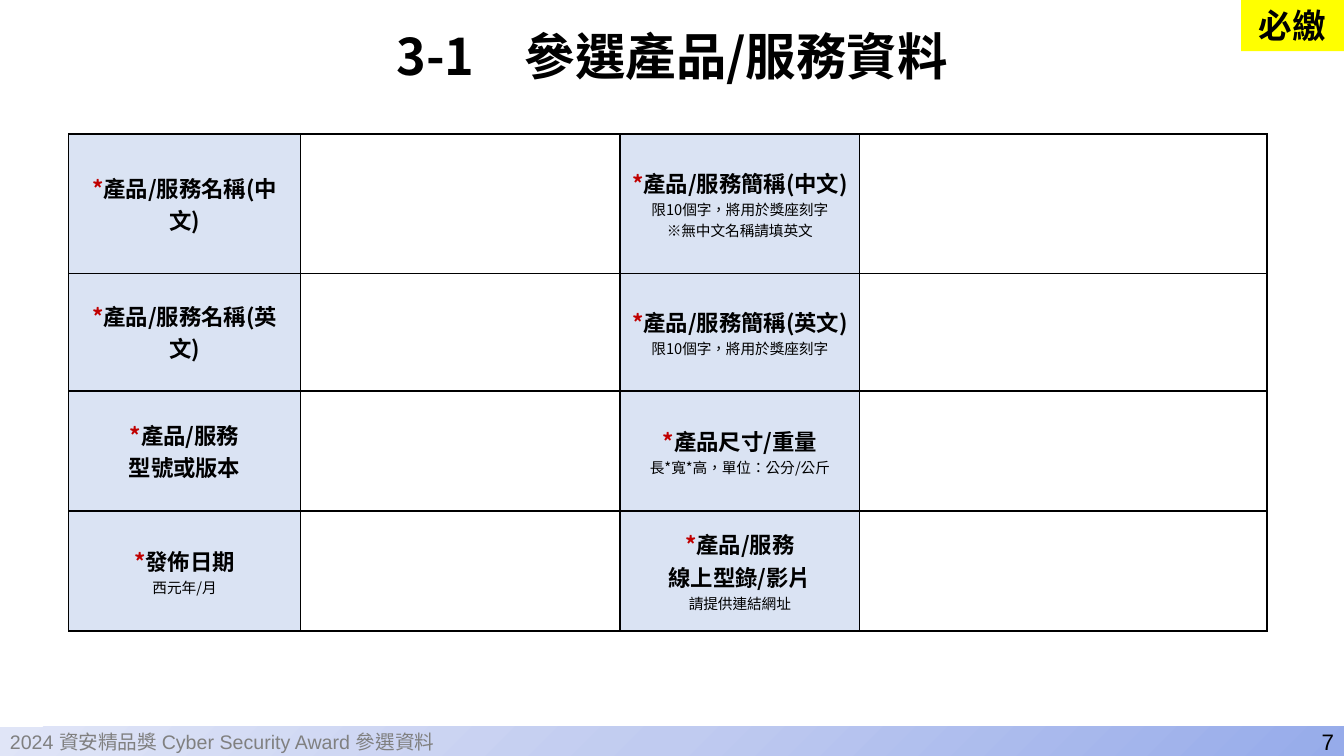
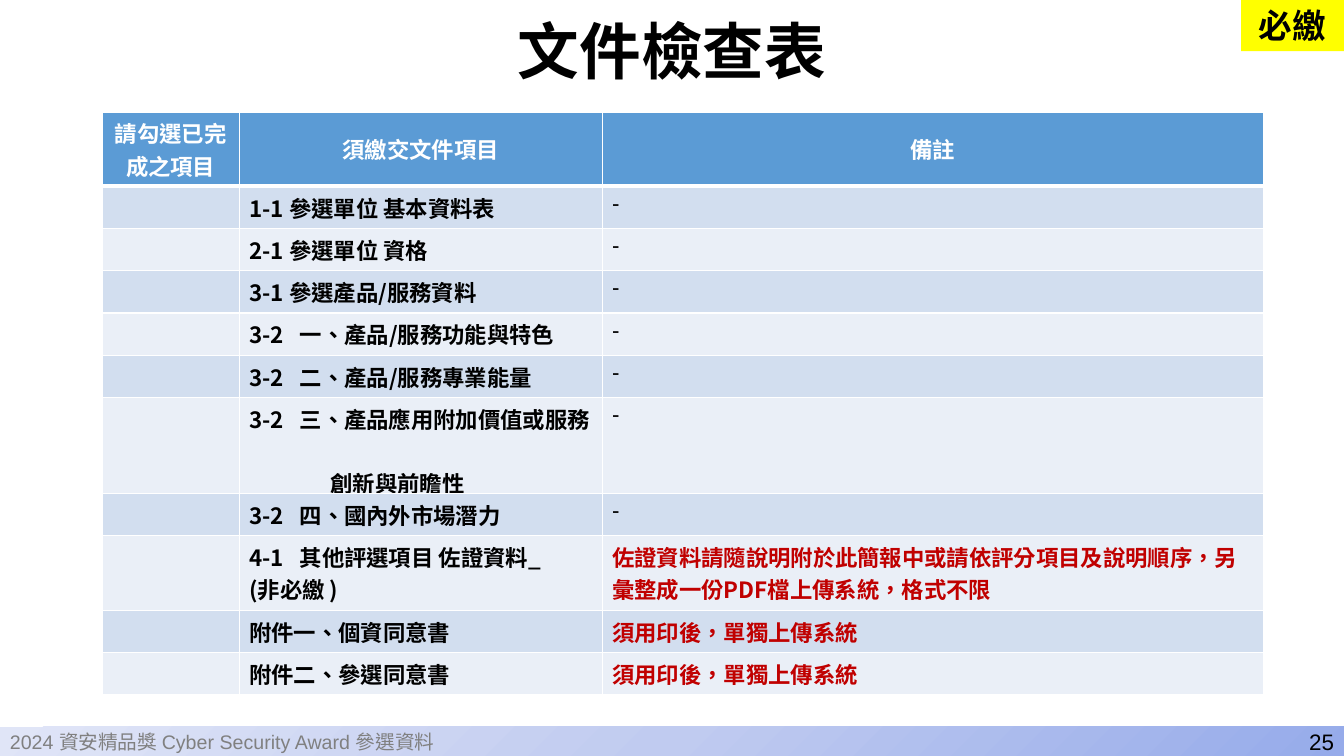
from dataclasses import dataclass

from lxml import etree
from pptx import Presentation
from pptx.dml.color import RGBColor
from pptx.enum.lang import MSO_LANGUAGE_ID
from pptx.enum.shapes import MSO_SHAPE
from pptx.enum.text import MSO_ANCHOR, PP_ALIGN
from pptx.oxml import parse_xml
from pptx.oxml.ns import nsdecls, qn
from pptx.util import Pt

LEFT, CENTER, RIGHT = PP_ALIGN.LEFT, PP_ALIGN.CENTER, PP_ALIGN.RIGHT
TOP, MIDDLE = MSO_ANCHOR.TOP, MSO_ANCHOR.MIDDLE
RECTANGLE = MSO_SHAPE.RECTANGLE
CHINESE = MSO_LANGUAGE_ID.TRADITIONAL_CHINESE


@dataclass(frozen=True)
class Theme:
    """Colours, fonts and type sizes of the deck."""

    black: str = "000000"
    white: str = "FFFFFF"
    red: str = "C00000"
    grey: str = "808080"
    yellow: str = "FFFF00"
    label: str = "DAE3F3"
    header: str = "5B9BD5"
    bands: tuple = ("D2DEEF", "EAEFF7")
    gradient: tuple = ((0, "96ABEA"), (50, "C0CBF0"), (100, "E0E5F7"))
    plain_font: str = "Arial"
    chinese_font: str = "Noto Sans CJK SC"
    long_title: float = 36
    short_title: float = 44
    badge: float = 24
    text: float = 16
    footer: float = 14
    hint: float = 10.5


THEME = Theme()
WIDTH, HEIGHT = 960, 540
TITLE_BOX = (0, 0, WIDTH, 78.5)
BADGE_BOX = (886.5, 0, 73.5, 36.5)
BAND_BOX = (0, 519, WIDTH, 21)
NUMBER_BOX = (905, 515, 55, 29)
CODE_TAB = 36

FORM_BOX = (49, 95.76, 856.08, 354.96)
FORM_COLUMNS = (165.6, 228.24, 171.36, 290.88)
FORM_ROWS = (99.36, 84.24, 85.68, 85.68)
FORM_LABELS = (
    ((["產品/服務名稱(中文)"], []),
     (["產品/服務簡稱(中文)"], ["限10個字，將用於獎座刻字", "※無中文名稱請填英文"])),
    ((["產品/服務名稱(英文)"], []),
     (["產品/服務簡稱(英文)"], ["限10個字，將用於獎座刻字"])),
    ((["產品/服務", "型號或版本"], []),
     (["產品尺寸/重量"], ["長*寬*高，單位：公分/公斤"])),
    ((["發佈日期"], ["西元年/月"]),
     (["產品/服務", "線上型錄/影片"], ["請提供連結網址"])),
)

CHECK_BOX = (73, 80, 829.44, 425)
CHECK_COLUMNS = (97.92, 259.2, 472.32)
CHECK_HEADERS = ("請勾選已完成之項目", "須繳交文件項目", "備註")
HEADER_HEIGHT, ROW_HEIGHT = 53, 30.2
SEAL_NOTE = "須用印後，單獨上傳系統"
CHECK_ITEMS = (
    (["1-1 參選單位 基本資料表"], "-"),
    (["2-1 參選單位 資格"], "-"),
    (["3-1 參選產品/服務資料"], "-"),
    (["3-2\t一、產品/服務功能與特色"], "-"),
    (["3-2\t二、產品/服務專業能量"], "-"),
    (["3-2\t三、產品應用附加價值或服務", "創新與前瞻性"], "-"),
    (["3-2\t四、國內外市場潛力"], "-"),
    (["4-1\t其他評選項目 佐證資料_", "(非必繳 )"],
     "佐證資料請隨說明附於此簡報中或請依評分項目及說明順序，另彙整成一份PDF檔上傳系統，格式不限"),
    (["附件一、個資同意書"], SEAL_NOTE),
    (["附件二、參選同意書"], SEAL_NOTE),
)


def points(box):
    """Turn a box of numbers into lengths."""
    return [Pt(value) for value in box]


def color(value):
    """Turn a hex string into a colour."""
    return RGBColor.from_string(value)


def style(para, size, ink=THEME.black, bold=True, align=CENTER, face=THEME.chinese_font):
    """Set alignment and font of one paragraph."""
    para.alignment = align
    font = para.font
    font.size, font.bold, font.name = Pt(size), bold, face
    font.color.rgb = color(ink)
    font.language_id = CHINESE
    east = etree.SubElement(para._p.pPr.find(qn("a:defRPr")), qn("a:ea"))
    east.set("typeface", THEME.chinese_font)


def write(frame, lines):
    """Fill a text frame with one paragraph per line and return them."""
    frame.word_wrap = True
    paras = [frame.paragraphs[0]] + [frame.add_paragraph() for _ in lines[1:]]
    for para, line in zip(paras, lines):
        if line:
            para.add_run().text = line
    return paras


def add_block(page, box, text, fill=None):
    """Add a flat rectangle with one line of text."""
    block = page.shapes.add_shape(RECTANGLE, *points(box))
    block.shadow.inherit = False
    block.line.fill.background()
    block.fill.background()
    if fill:
        block.fill.solid()
        block.fill.fore_color.rgb = color(fill)
    block.text_frame.vertical_anchor = MIDDLE
    return block, write(block.text_frame, [text])[0]


def add_band(page, box):
    """Draw the footer band and hand it to the layout of the page."""
    band, para = add_block(page, box, "2024 資安精品獎 Cyber Security Award 參選資料")
    style(para, THEME.footer, THEME.grey, False, LEFT, THEME.plain_font)
    stops = "".join(
        f'<a:gs pos="{place * 1000}"><a:srgbClr val="{tint}"/></a:gs>'
        for place, tint in THEME.gradient
    )
    gradient = parse_xml(
        f'<a:gradFill {nsdecls("a")} rotWithShape="1"><a:gsLst>{stops}</a:gsLst>'
        '<a:path path="circle"><a:fillToRect l="100000" t="100000"/></a:path></a:gradFill>'
    )
    properties = band.element.spPr
    properties.replace(properties.find(qn("a:noFill")), gradient)
    page.slide_layout.element.cSld.spTree.append(band.element)


def add_page(deck, layout, title, size, number, spacing=1.0):
    """Add a slide with title, badge and page number."""
    page = deck.slides.add_slide(layout)
    heading = page.shapes.title
    heading.left, heading.top, heading.width, heading.height = points(TITLE_BOX)
    heading.text_frame.vertical_anchor = MIDDLE
    para = write(heading.text_frame, [title])[0]
    para.line_spacing = spacing
    style(para, size)
    style(add_block(page, BADGE_BOX, "必繳", THEME.yellow)[1], THEME.badge)
    number_box = page.shapes.add_textbox(*points(NUMBER_BOX))
    number_box.text_frame.vertical_anchor = MIDDLE
    para = write(number_box.text_frame, [number])[0]
    style(para, THEME.text, bold=False, align=RIGHT, face=THEME.plain_font)
    return page


def add_grid(page, box, columns, rows, header):
    """Add a table with given column widths and row heights."""
    grid = page.shapes.add_table(len(rows), len(columns), *points(box)).table
    grid.first_row, grid.horz_banding = header, False
    for column, width in zip(grid.columns, columns):
        column.width = Pt(width)
    for row, height in zip(grid.rows, rows):
        row.height = Pt(height)
    return grid


def dress(cell, fill, border, top=1, bottom=1, anchor=MIDDLE):
    """Set fill, anchor and borders of a cell."""
    cell.vertical_anchor = anchor
    cell.fill.solid()
    cell.fill.fore_color.rgb = color(fill)
    properties = cell._tc.get_or_add_tcPr()
    sides = (("L", 1), ("R", 1), ("T", top), ("B", bottom))
    for index, (side, width) in enumerate(sides):
        properties.insert(index, parse_xml(
            f'<a:ln{side} {nsdecls("a")} w="{Pt(width)}"><a:solidFill>'
            f'<a:srgbClr val="{border}"/></a:solidFill></a:ln{side}>'
        ))


def fill_label(cell, names, hints):
    """Write a starred field name with its hints."""
    paras = write(cell.text_frame, ["*"] + names[1:] + hints)
    paras[0].runs[0].font.color.rgb = color(THEME.red)
    paras[0].add_run().text = names[0]
    for index, para in enumerate(paras):
        named = index < len(names)
        style(para, THEME.text if named else THEME.hint, bold=named)


def add_form(page, box):
    """Add the product data form."""
    grid = add_grid(page, box, FORM_COLUMNS, FORM_ROWS, False)
    for row, labels in enumerate(FORM_LABELS):
        for pair, (names, hints) in enumerate(labels):
            label, entry = grid.cell(row, 2 * pair), grid.cell(row, 2 * pair + 1)
            fill_label(label, names, hints)
            style(entry.text_frame.paragraphs[0], THEME.text)
            dress(label, THEME.label, THEME.black)
            dress(entry, THEME.white, THEME.black)


def fill_item(cell, lines):
    """Write a checklist item, with codes set off by a tab."""
    for line, para in zip(lines, write(cell.text_frame, lines)):
        properties = para._p.get_or_add_pPr()
        if "\t" in line:
            tabs = etree.SubElement(properties, qn("a:tabLst"))
            etree.SubElement(tabs, qn("a:tab"), pos=str(Pt(CODE_TAB)), algn="l")
        elif line == "創新與前瞻性":
            para.space_before = Pt(23)
            properties.set("marL", str(Pt(58)))
        style(para, THEME.text, align=LEFT)


def add_checklist(page, box):
    """Add the table of documents to hand in."""
    heights = [HEADER_HEIGHT]
    for lines, note in CHECK_ITEMS:
        heights.append(ROW_HEIGHT + 23 * (len(lines) - 1))
    grid = add_grid(page, box, CHECK_COLUMNS, heights, True)
    for column, text in enumerate(CHECK_HEADERS):
        cell = grid.cell(0, column)
        para = write(cell.text_frame, [text])[0]
        style(para, THEME.text, THEME.white, face=THEME.plain_font)
        dress(cell, THEME.header, THEME.white, bottom=3)
    for row, (lines, note) in enumerate(CHECK_ITEMS, 1):
        tick, item, remark = (grid.cell(row, column) for column in range(3))
        style(tick.text_frame.paragraphs[0], THEME.text)
        fill_item(item, lines)
        para = write(remark.text_frame, [note])[0]
        if note == "-":
            style(para, THEME.text, bold=False, align=LEFT, face=THEME.plain_font)
        else:
            style(para, THEME.text, THEME.red, align=LEFT)
        for cell, anchor in ((tick, TOP), (item, MIDDLE), (remark, TOP)):
            tint = THEME.bands[(row - 1) % 2]
            dress(cell, tint, THEME.white, top=3 if row == 1 else 1, anchor=anchor)


def main():
    """Build and save the deck."""
    deck = Presentation()
    deck.slide_width, deck.slide_height = Pt(WIDTH), Pt(HEIGHT)
    layout = deck.slide_layouts[5]
    form_page = add_page(deck, layout, "3-1　參選產品/服務資料", THEME.long_title, "7")
    add_band(form_page, BAND_BOX)
    add_form(form_page, FORM_BOX)
    check_page = add_page(deck, layout, "文件檢查表", THEME.short_title, "25", 0.9)
    add_checklist(check_page, CHECK_BOX)
    deck.save("out.pptx")


if __name__ == "__main__":
    main()
